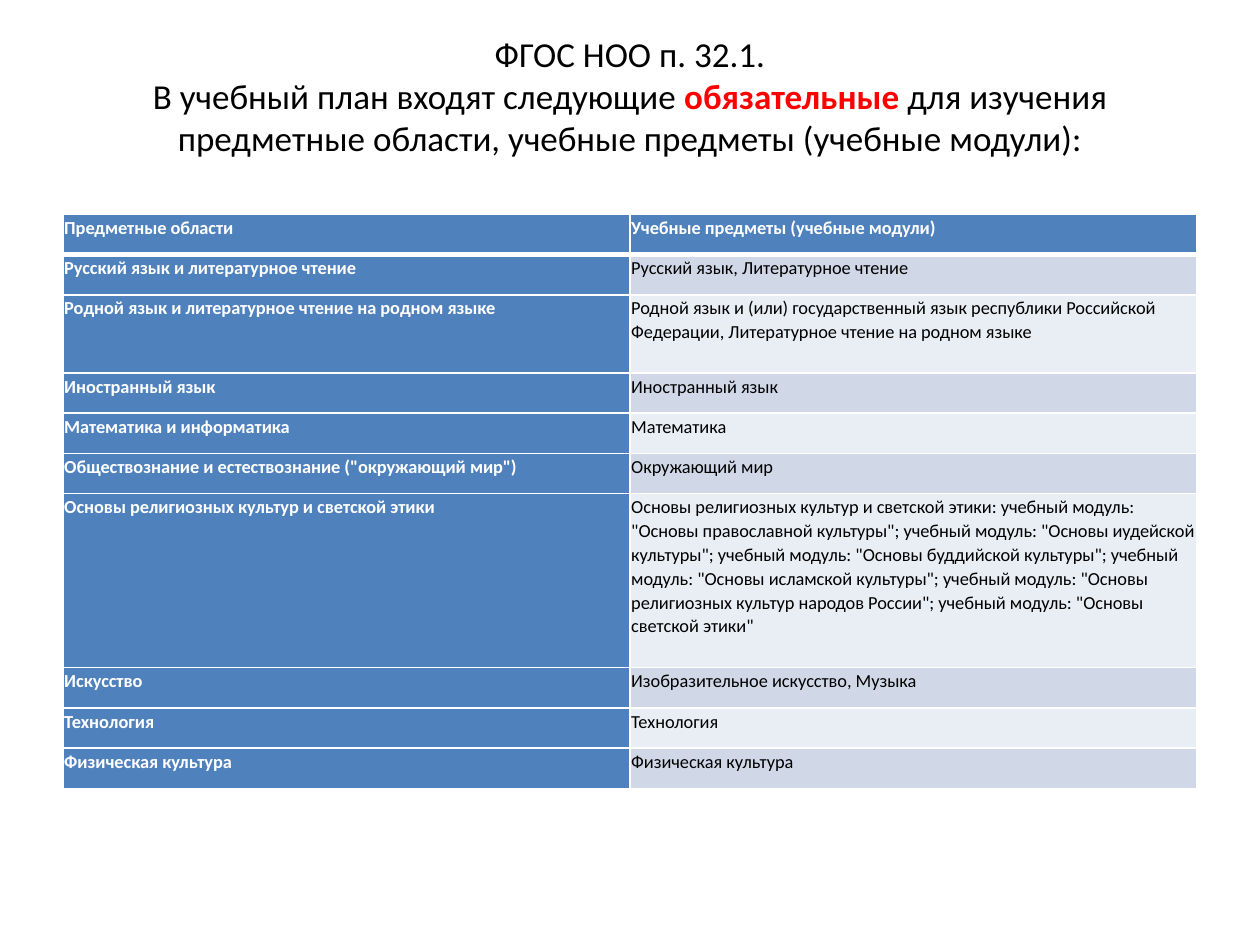
from pptx import Presentation
from pptx import util as u
from pptx.dml.color import RGBColor
from pptx.enum import text
from pptx.oxml import parse_xml
from pptx.oxml.ns import nsdecls

BLACK = RGBColor(0, 0, 0)
WHITE = RGBColor(255, 255, 255)
RED = RGBColor(255, 0, 0)
BLUE = RGBColor(0x4F, 0x81, 0xBD)
BANDS = [RGBColor(0xD0, 0xD8, 0xE8), RGBColor(0xE9, 0xED, 0xF4)]

ROWS = [
    (0.32, "Предметные области", "Учебные предметы (учебные модули)"),
    (0.32, "Русский язык и литературное чтение", "Русский язык, Литературное чтение"),
    (0.62, "Родной язык и литературное чтение на родном языке",
     "Родной язык и (или) государственный язык республики Российской Федерации, "
     "Литературное чтение на родном языке"),
    (0.32, "Иностранный язык", "Иностранный язык"),
    (0.32, "Математика и информатика", "Математика"),
    (0.32, 'Обществознание и естествознание ("окружающий мир")', "Окружающий мир"),
    (1.38, "Основы религиозных культур и светской этики",
     'Основы религиозных культур и светской этики: учебный модуль: "Основы православной '
     'культуры"; учебный модуль: "Основы иудейской культуры"; учебный модуль: "Основы '
     'буддийской культуры"; учебный модуль: "Основы исламской культуры"; учебный модуль: '
     '"Основы религиозных культур народов России"; учебный модуль: "Основы светской этики"'),
    (0.32, "Искусство", "Изобразительное искусство, Музыка"),
    (0.32, "Технология", "Технология"),
    (0.32, "Физическая культура", "Физическая культура"),
]


def add_run(para, words, size, color, bold=False):
    """Append one styled run to a paragraph."""
    run = para.add_run()
    run.text = words
    font = run.font
    font.name, font.size, font.bold = "Calibri", u.Pt(size), bold
    font.color.rgb = color


def set_edges(cell, base):
    """Draw white cell borders, the bottom one at the given point width."""
    props = cell._tc.get_or_add_tcPr()
    for spot, (side, width) in enumerate([("L", 1), ("R", 1), ("T", 1), ("B", base)]):
        props.insert(spot, parse_xml(
            f'<a:ln{side} {nsdecls("a")} w="{u.Pt(width)}"><a:solidFill>'
            f'<a:srgbClr val="{WHITE}"/></a:solidFill></a:ln{side}>'))


def fill_cell(cell, words, fill, color, bold, base):
    """Write and style one table cell."""
    cell.fill.solid()
    cell.fill.fore_color.rgb = fill
    cell.margin_left = cell.margin_right = u.Inches(0.01)
    cell.margin_top = cell.margin_bottom = u.Inches(0.01)
    para = cell.text_frame.paragraphs[0]
    para.line_spacing = 1.07
    add_run(para, words, 10.5, color, bold)
    set_edges(cell, base)


def place_title(slide, left, top, width, height):
    """Place the heading in the title placeholder."""
    title = slide.shapes.title
    title.left, title.top, title.width, title.height = left, top, width, height
    frame = title.text_frame
    frame.word_wrap = True
    frame.auto_size = text.MSO_AUTO_SIZE.NONE
    frame.vertical_anchor = text.MSO_ANCHOR.MIDDLE
    frame.margin_bottom = u.Inches(0.38)
    para = frame.paragraphs[0]
    para.alignment = text.PP_ALIGN.CENTER
    add_run(para, "ФГОС НОО п. 32.1.", 20, BLACK)
    para.add_line_break()
    add_run(para, "В учебный план входят следующие ", 20, BLACK)
    add_run(para, "обязательные", 20, RED, True)
    add_run(para, " для изучения предметные области, учебные предметы (учебные модули):",
            20, BLACK)


def place_table(slide, left, top, width):
    """Place the table of subject areas and subjects."""
    height = u.Inches(sum(row[0] for row in ROWS))
    table = slide.shapes.add_table(len(ROWS), 2, left, top, width, height).table
    for i, (tall, *words) in enumerate(ROWS):
        table.rows[i].height = u.Inches(tall)
        for j, word in enumerate(words):
            head = i == 0 or j == 0
            fill = BLUE if head else BANDS[(i - 1) % 2]
            fill_cell(table.cell(i, j), word, fill, WHITE if head else BLACK,
                      head, 3 if i == 0 else 1)


def main():
    """Build and save the slide."""
    deck = Presentation()
    deck.slide_width, deck.slide_height = u.Inches(10), u.Inches(7.5)
    slide = deck.slides.add_slide(deck.slide_layouts[5])
    place_title(slide, u.Inches(0.5), u.Inches(0.3), u.Inches(9), u.Inches(1.25))
    place_table(slide, u.Inches(0.5), u.Inches(1.7), u.Inches(9))
    deck.save("out.pptx")


if __name__ == "__main__":
    main()
